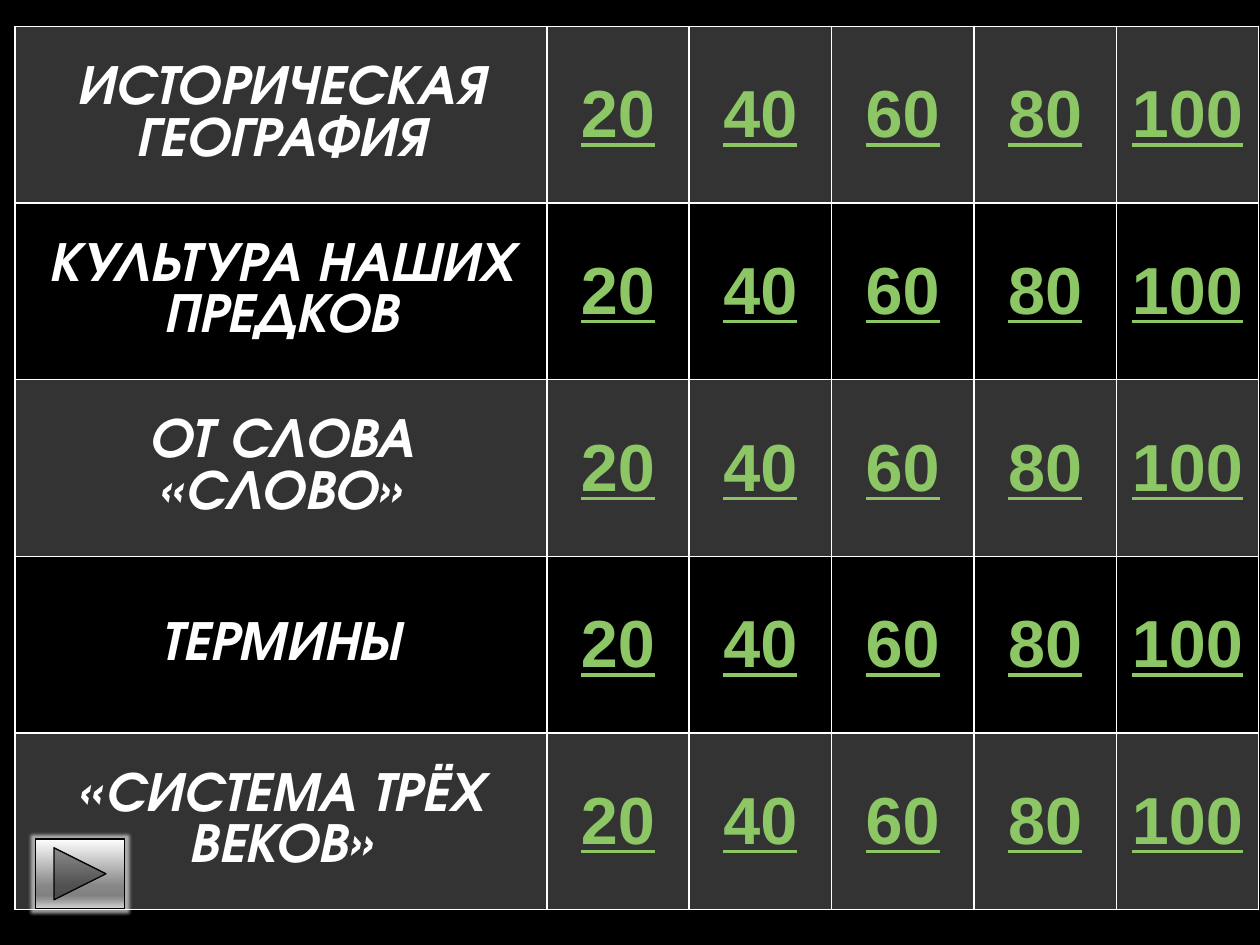
from typing import NamedTuple

from lxml import etree
from pptx import Presentation
from pptx import util as u
from pptx.dml.color import RGBColor
from pptx.enum import shapes, text
from pptx.oxml import parse_xml
from pptx.oxml.ns import nsdecls, qn

SLIDE_W, SLIDE_H = 10, 7.5
LEFT, TOP = 0.12, 0.21
TOPIC_W, SCORE_W, ROW_H = 4.22, 1.13, 1.402
WHITE, BLACK, GREEN = "FFFFFF", "000000", "8DC765"

TOPICS = [
    "ИСТОРИЧЕСКАЯ ГЕОГРАФИЯ",
    "КУЛЬТУРА НАШИХ ПРЕДКОВ",
    "ОТ СЛОВА «СЛОВО»",
    "ТЕРМИНЫ",
    "«СИСТЕМА ТРЁХ ВЕКОВ»",
]
SCORES = ["20", "40", "60", "80", "100"]
BUTTON_STOPS = [(0, "FEFEFE"), (68, "878787"), (81, "818181"),
                (86, "909090"), (100, "D3D3D3")]


class Style(NamedTuple):
    font: str
    size: int
    color: str
    italic: bool
    underline: bool


TOPIC = Style("TeX Gyre Adventor", 32, WHITE, True, False)
SCORE = Style("Arial", 38, GREEN, False, True)


def rgb(value: str) -> RGBColor:
    return RGBColor.from_string(value)


def shade_cell(cell, shaded: bool) -> None:
    """Fill a cell with translucent white, or leave it clear."""
    if not shaded:
        cell.fill.background()
        return
    cell.fill.solid()
    cell.fill.fore_color.rgb = rgb(WHITE)
    color = cell._tc.tcPr.find(".//" + qn("a:srgbClr"))
    etree.SubElement(color, qn("a:alpha")).set("val", "20000")


def border_cell(cell) -> None:
    for index, side in enumerate(("lnL", "lnR", "lnT", "lnB")):
        cell._tc.tcPr.insert(index, parse_xml(
            f'<a:{side} {nsdecls("a")} w="12700"><a:solidFill>'
            f'<a:srgbClr val="{WHITE}"/></a:solidFill></a:{side}>'))


def write_cell(cell, words: str, style: Style) -> None:
    cell.vertical_anchor = text.MSO_ANCHOR.MIDDLE
    para = cell.text_frame.paragraphs[0]
    para.alignment = text.PP_ALIGN.CENTER
    span = para.add_run()
    span.text = words
    font = span.font
    font.name, font.size, font.bold = style.font, u.Pt(style.size), True
    font.italic, font.underline = style.italic, style.underline
    font.color.rgb = rgb(style.color)


def add_board(page) -> None:
    width = TOPIC_W + SCORE_W * len(SCORES)
    frame = page.shapes.add_table(
        len(TOPICS), 1 + len(SCORES), u.Inches(LEFT), u.Inches(TOP),
        u.Inches(width), u.Inches(ROW_H * len(TOPICS)))
    board = frame.table
    board.first_row = board.horz_banding = False
    for index, column in enumerate(board.columns):
        column.width = u.Inches(SCORE_W if index else TOPIC_W)
    for r, topic in enumerate(TOPICS):
        board.rows[r].height = u.Inches(ROW_H)
        for c, words in enumerate([topic, *SCORES]):
            cell = board.cell(r, c)
            write_cell(cell, words, SCORE if c else TOPIC)
            shade_cell(cell, r % 2 == 0)
            border_cell(cell)


def add_next_button(page) -> None:
    button = page.shapes.add_shape(
        shapes.MSO_SHAPE.ACTION_BUTTON_FORWARD_OR_NEXT,
        u.Inches(0.28), u.Inches(6.66), u.Inches(0.71), u.Inches(0.55))
    button.shadow.inherit = False
    button.line.color.rgb = rgb(BLACK)
    button.line.width = u.Pt(0.75)

    # Metallic gradient with five stops, running downwards
    button.fill.gradient()
    button.fill.gradient_angle = 270
    stops = button._element.spPr.find(".//" + qn("a:gsLst"))
    stops.clear()
    for position, color in BUTTON_STOPS:
        stop = etree.SubElement(stops, qn("a:gs"), pos=str(position * 1000))
        etree.SubElement(stop, qn("a:srgbClr"), val=color)

    # Soft pale glow around the edge
    effects = button._element.spPr.find(qn("a:effectLst"))
    effects.append(parse_xml(
        f'<a:glow {nsdecls("a")} rad="50800"><a:srgbClr val="{WHITE}">'
        '<a:alpha val="60000"/></a:srgbClr></a:glow>'))


def main() -> None:
    deck = Presentation()
    deck.slide_width, deck.slide_height = u.Inches(SLIDE_W), u.Inches(SLIDE_H)
    page = deck.slides.add_slide(deck.slide_layouts[6])
    page.background.fill.solid()
    page.background.fill.fore_color.rgb = rgb(BLACK)
    add_board(page)
    add_next_button(page)
    deck.save("out.pptx")


if __name__ == "__main__":
    main()
